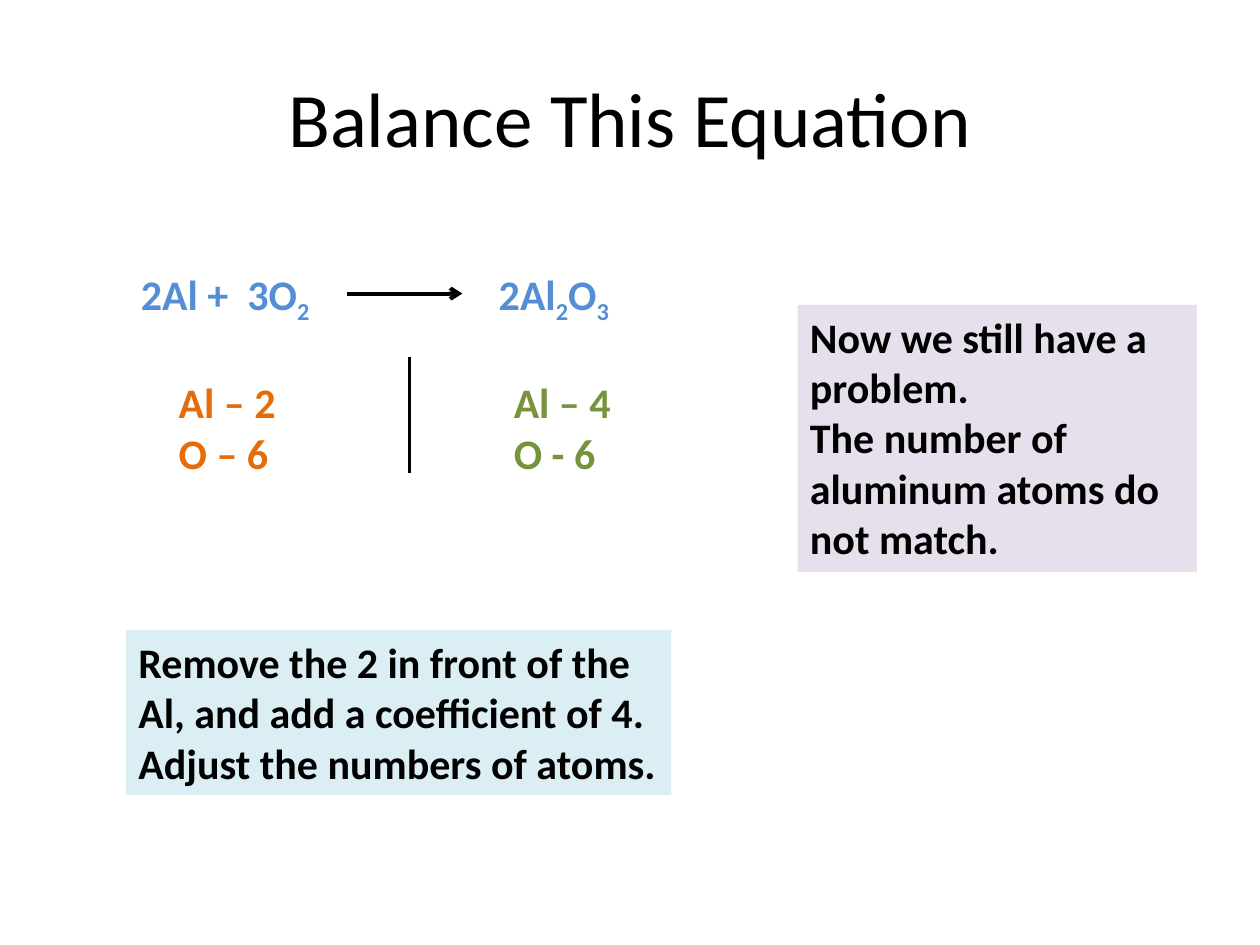
from pptx import Presentation
from pptx.dml.color import RGBColor
from pptx.enum.shapes import MSO_CONNECTOR, MSO_SHAPE
from pptx.enum.text import MSO_ANCHOR, MSO_AUTO_SIZE, PP_ALIGN
from pptx.oxml.ns import qn
from pptx.util import Inches, Pt
from lxml import etree

LINE = MSO_CONNECTOR.STRAIGHT
RECT = MSO_SHAPE.RECTANGLE
MIDDLE, TOP = MSO_ANCHOR.MIDDLE, MSO_ANCHOR.TOP
GROW = MSO_AUTO_SIZE.SHAPE_TO_FIT_TEXT
LEFT, CENTER = PP_ALIGN.LEFT, PP_ALIGN.CENTER

BLACK = RGBColor(0x00, 0x00, 0x00)
BLUE = RGBColor(0x55, 0x8E, 0xD5)
ORANGE = RGBColor(0xE4, 0x6C, 0x0A)
GREEN = RGBColor(0x77, 0x93, 0x3C)
LILAC = RGBColor(0xE6, 0xE0, 0xEC)
AQUA = RGBColor(0xDB, 0xEE, 0xF4)


class Deck:
    """Holds the text style and the current slide."""

    face = "Calibri"
    size = 24

    def __init__(self):
        self.prs = Presentation()
        self.prs.slide_width, self.prs.slide_height = Inches(10), Inches(7.5)
        self.slide = self.prs.slides.add_slide(self.prs.slide_layouts[5])

    def style(self, run, color=BLACK, size=size, bold=True):
        font = run.font
        font.name, font.size, font.bold = self.face, Pt(size), bold
        font.color.rgb = color

    def place(self, shape, box):
        shape.left, shape.top, shape.width, shape.height = map(Inches, box)

    def title(self, text, box):
        shape = self.slide.shapes.title
        self.place(shape, box)
        frame = shape.text_frame
        frame.text = text
        frame.vertical_anchor = MIDDLE
        frame.paragraphs[0].alignment = CENTER
        self.style(frame.paragraphs[0].runs[0], size=44, bold=False)

    def note(self, text, box, fill):
        shape = self.slide.shapes.add_shape(RECT, *map(Inches, box))
        shape.shadow.inherit = False
        shape.fill.solid()
        shape.fill.fore_color.rgb = fill
        shape.line.fill.background()
        frame = shape.text_frame
        frame.text = text
        frame.word_wrap, frame.auto_size = True, GROW
        frame.vertical_anchor = TOP
        for para in frame.paragraphs:
            para.alignment = LEFT
            self.style(para.runs[0])

    def sums(self, rows, box):
        frame = self.slide.shapes.add_textbox(*map(Inches, box)).text_frame
        frame.word_wrap, frame.auto_size = True, GROW
        for num, (stops, gap, parts) in enumerate(rows):
            para = frame.paragraphs[0] if num == 0 else frame.add_paragraph()
            tabs = etree.SubElement(para._p.get_or_add_pPr(), qn("a:tabLst"))
            for stop in stops:
                etree.SubElement(tabs, qn("a:tab"), pos=str(Inches(stop)), algn="l")
            if gap:
                para.space_before = Pt(gap)
            for text, color, low in parts:
                run = para.add_run()
                run.text = text
                self.style(run, color)
                if low:
                    run._r.get_or_add_rPr().set("baseline", "-25000")

    def line(self, start, end, arrow=False):
        link = self.slide.shapes.add_connector(LINE, *map(Inches, start + end))
        link.line.color.rgb, link.line.width = BLACK, Pt(2.25)
        if arrow:
            etree.SubElement(link.line._get_or_add_ln(), qn("a:tailEnd"), type="arrow")
        etree.SubElement(link._element.spPr, qn("a:effectLst"))


def main():
    deck = Deck()
    deck.title("Balance This Equation", (0.5, 0.3, 9, 1.25))
    deck.note(
        "Now we still have a problem.\nThe number of aluminum atoms do not match.",
        (6.33, 2.42, 3.17, 2.12), LILAC)
    terms = [("\t2Al +  3O", False), ("2", True), ("\t2Al", False),
             ("2", True), ("O", False), ("3", True)]
    rows = [((0.6, 3.44), 0, [(text, BLUE, low) for text, low in terms])]
    for left, right, gap in (("Al – 2", "Al – 4", 29.3), ("O – 6", "O - 6", 0)):
        parts = [("\t" + left, ORANGE, False), ("\t" + right, GREEN, False)]
        rows.append(((0.9, 3.56), gap, parts))
    deck.sums(rows, (0.42, 2.08, 5.5, 2.02))
    deck.line((2.75, 2.33), (3.67, 2.33), arrow=True)
    deck.line((3.25, 2.83), (3.25, 3.75))
    deck.note(
        "Remove the 2 in front of the Al, and add a coefficient of 4. "
        "Adjust the numbers of atoms.", (1, 5, 4.33, 1.31), AQUA)
    deck.prs.save("out.pptx")


if __name__ == "__main__":
    main()
